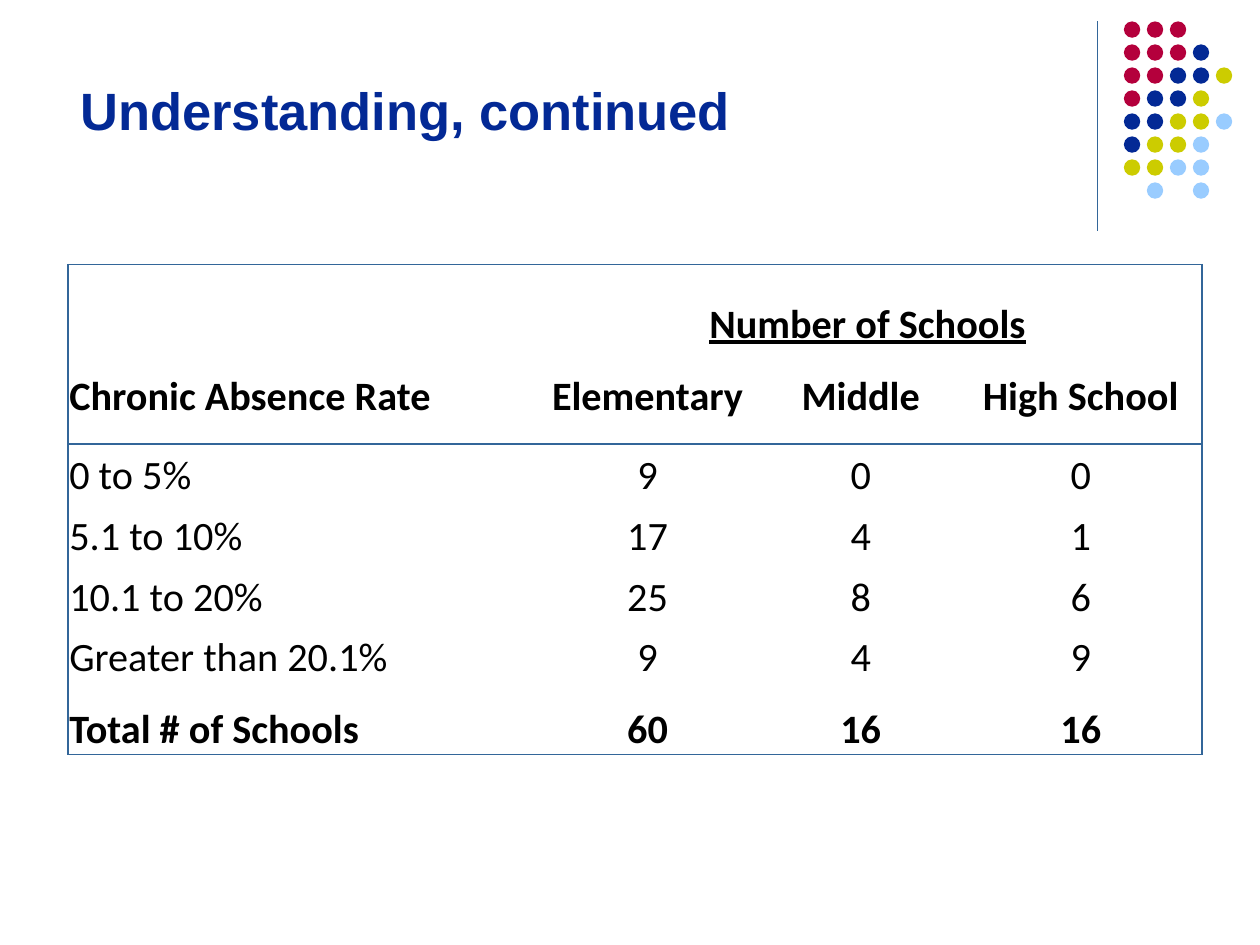
from dataclasses import dataclass

from lxml import etree
from pptx import Presentation
from pptx import util as u
from pptx.dml.color import RGBColor
from pptx.enum import shapes, text
from pptx.oxml import ns


@dataclass(frozen=True)
class Theme:
    navy: str = "032995"
    red: str = "B4003C"
    lime: str = "CCCC00"
    sky: str = "99CCFF"
    rule: str = "336699"
    ink: str = "000000"
    head: str = "Arial"
    body: str = "Calibri"
    big: int = 30
    base: int = 23


THEME = Theme()
DOTS = ["RRR", "RRRN", "RRNNL", "RNNL", "NNLLS", "NLLS", "LLSS", " S S"]
HUES = {"R": THEME.red, "N": THEME.navy, "L": THEME.lime, "S": THEME.sky}
WIDTHS = [3.69, 1.81, 1.57, 1.92]
HEIGHTS = [0.67, 0.75, 0.45, 0.48, 0.48, 0.48, 0.57]
ROWS = [
    ["", "Number of Schools", "", ""],
    ["Chronic Absence Rate", "Elementary", "Middle", "High School"],
    ["0 to 5%", "9", "0", "0"],
    ["5.1 to 10%", "17", "4", "1"],
    ["10.1 to 20%", "25", "8", "6"],
    ["Greater than 20.1%", "9", "4", "9"],
    ["Total # of Schools", "60", "16", "16"],
]


def color(code):
    return RGBColor.from_string(code)


def style(run, face, size, code, bold):
    font = run.font
    font.name, font.size, font.bold = face, u.Pt(size), bold
    font.color.rgb = color(code)


def add_title(slide, left, top, width, height):
    box = slide.shapes.add_textbox(*map(u.Inches, (left, top, width, height)))
    frame = box.text_frame
    frame.word_wrap = True
    frame.text = "Understanding, continued"
    style(frame.paragraphs[0].runs[0], THEME.head, THEME.big, THEME.navy, True)


def add_dots(slide, left, top, width, height):
    line = slide.shapes.add_connector(
        shapes.MSO_CONNECTOR.STRAIGHT,
        u.Inches(left), u.Inches(top), u.Inches(left), u.Inches(top + height))
    line.line.color.rgb = color(THEME.rule)
    line.line.width = u.Pt(0.75)
    etree.SubElement(line._element.spPr, ns.qn("a:effectLst"))
    size = 0.13
    start = left + 0.21
    step = (width - 0.21 - size) / 4
    group = slide.shapes.add_group_shape()
    for row, marks in enumerate(DOTS):
        for col, mark in enumerate(marks):
            if mark == " ":
                continue
            dot = group.shapes.add_shape(
                shapes.MSO_SHAPE.OVAL,
                u.Inches(start + col * step), u.Inches(top + row * step),
                u.Inches(size), u.Inches(size))
            dot.shadow.inherit = False
            dot.fill.solid()
            dot.fill.fore_color.rgb = color(HUES[mark])
            dot.line.fill.background()


def set_edges(cell, sides):
    props = cell._tc.get_or_add_tcPr()
    for side in "LRTB":
        edge = etree.SubElement(props, ns.qn("a:ln" + side), w=str(u.Pt(1)))
        if side in sides:
            fill = etree.SubElement(edge, ns.qn("a:solidFill"))
            etree.SubElement(fill, ns.qn("a:srgbClr"), val=THEME.rule)
        else:
            etree.SubElement(edge, ns.qn("a:noFill"))


def find_edges(row, col):
    last = len(ROWS) - 1
    tests = {
        "L": col == 0,
        "R": col == 3 or (row, col) == (0, 1),
        "T": row in (0, 2),
        "B": row in (1, last),
    }
    return [side for side, shown in tests.items() if shown]


def fill_cell(cell, row, col, words):
    set_edges(cell, find_edges(row, col))
    cell.fill.background()
    cell.margin_left = cell.margin_right = cell.margin_top = u.Inches(0.01)
    cell.margin_bottom = 0
    anchor = text.MSO_ANCHOR
    cell.vertical_anchor = anchor.MIDDLE if row == 1 else anchor.BOTTOM
    if not words:
        return
    cell.text_frame.text = words
    para = cell.text_frame.paragraphs[0]
    para.alignment = text.PP_ALIGN.CENTER if col else text.PP_ALIGN.LEFT
    run = para.runs[0]
    bold = row in (0, 1, len(ROWS) - 1)
    style(run, THEME.body, THEME.base, THEME.ink, bold)
    run.font.underline = row == 0


def add_rates(slide, left, top, width, height):
    frame = slide.shapes.add_table(
        len(ROWS), len(WIDTHS), *map(u.Inches, (left, top, width, height)))
    table = frame.table
    table.first_row = table.horz_banding = False
    for col, share in zip(table.columns, WIDTHS):
        col.width = u.Inches(width * share / sum(WIDTHS))
    for row, share in zip(table.rows, HEIGHTS):
        row.height = u.Inches(height * share / sum(HEIGHTS))
    table.cell(0, 1).merge(table.cell(0, 3))
    for row, line in enumerate(ROWS):
        for col, words in enumerate(line):
            fill_cell(table.cell(row, col), row, col, words)


def main():
    deck = Presentation()
    deck.slide_width, deck.slide_height = u.Inches(10), u.Inches(7.5)
    slide = deck.slides.add_slide(deck.slide_layouts[6])
    add_dots(slide, 8.71, 0.17, 1.07, 1.66)
    add_rates(slide, 0.54, 2.1, 9, 3.89)
    add_title(slide, 0.54, 0.57, 8.83, 0.58)
    deck.save("out.pptx")


if __name__ == "__main__":
    main()
